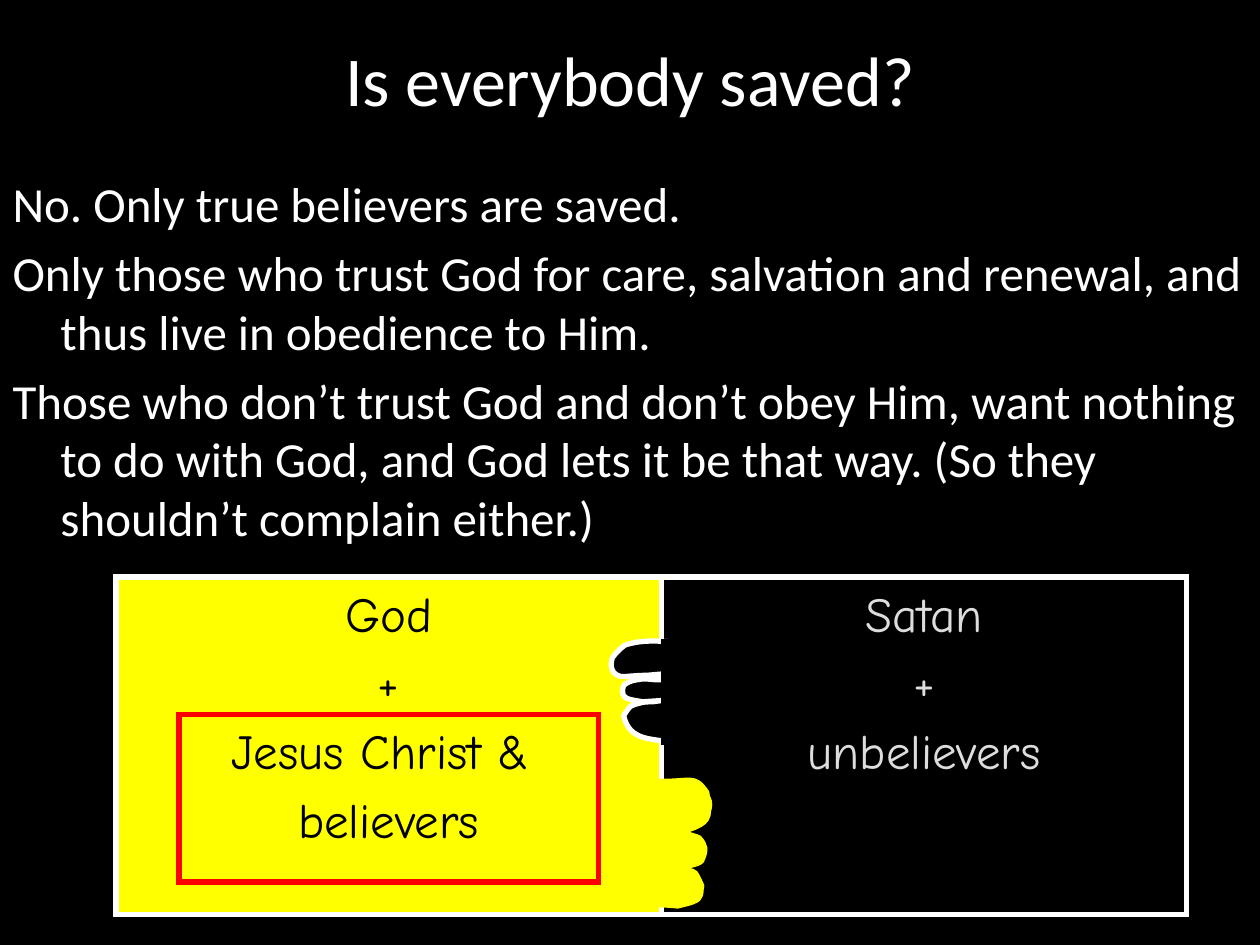
import pptx
import pptx.dml.color
import pptx.enum.shapes
import pptx.enum.text
import pptx.oxml.ns
import pptx.util
from lxml import etree
from pptx.util import Inches

WHITE, BLACK, YELLOW, RED, GREY = "FFFFFF", "000000", "FFFF00", "FF0000", "DDDDDD"
ALIGN = pptx.enum.text.PP_ALIGN
ANCHOR = pptx.enum.text.MSO_ANCHOR

BODY = [
    "No. Only true believers are saved.",
    "Only those who trust God for care, salvation and renewal, and thus live in obedience to Him.",
    "Those who don’t trust God and don’t obey Him, want nothing to do with God, "
    "and God lets it be that way. (So they shouldn’t complain either.)",
]
GOD_SIDE = ["God", "+", "Jesus Christ & ", "believers"]
SATAN_SIDE = ["Satan", "+", "unbelievers"]

DARK_FINGERS = [
    (.6, .1),
    (.46, .09), (.31, .07), (.16, .12), (.12, .15), (.09, .18), (.06, .22),
    (.04, .29), (.05, .35), (.13, .37), (.19, .37), (.25, .36), (.32, .36),
    (.38, .36), (.54, .33), (.5, .37), (.45, .42), (.36, .38), (.29, .39),
    (.23, .4), (.2, .4), (.15, .44), (.11, .56), (.21, .55), (.3, .57),
    (.75, .54), (.51, .55), (.38, .57), (.35, .57), (.31, .57), (.28, .58),
    (.27, .58), (.21, .6), (.2, .61), (.18, .63), (.15, .68), (.15, .68),
    (.19, .85), (.31, .86), (.46, .88), (.55, .86), (.58, .87), (.63, .8),
    (.64, .74), (.65, .68), (.67, .62), (.66, .51), (.66, .4), (.65, .3),
    (.65, .22), (.6, .18), (.6, .1),
]
BRIGHT_FINGERS = [
    (.15, .25),
    (.34, .2), (.25, .22), (.42, .2), (.68, .21), (.71, .14), (.81, .29),
    (.81, .31), (.82, .34), (.83, .36), (.84, .4), (.82, .43), (.82, .47),
    (.8, .56), (.66, .58), (.59, .61), (.46, .6), (.34, .61), (.21, .6),
    (.19, .59), (.26, .58), (.28, .58), (.36, .58), (.45, .59), (.54, .6),
    (.61, .61), (.68, .62), (.75, .65), (.8, .71), (.81, .74), (.77, .83),
    (.75, .86), (.66, .87), (.63, .88), (.52, .88), (.42, .87), (.32, .87),
    (.29, .87), (.37, .88), (.39, .88), (.47, .89), (.52, .9), (.6, .9),
    (.64, .91), (.69, .9), (.72, .93), (.74, .96), (.77, 1.03), (.77, 1.03),
    (.76, 1.06), (.77, 1.1), (.75, 1.12), (.74, 1.16), (.61, 1.18), (.58, 1.19),
    (.48, 1.18), (.39, 1.18), (.3, 1.17), (.26, 1.17), (.21, 1.16), (.16, 1.15),
    (.14, 1.14), (.1, 1.14), (.1, 1.14), (.07, 1), (.08, 1.08), (.1, .85),
    (.11, .72), (.12, .53), (.2, .41), (.19, .34), (.2, .3), (.15, .25),
]


def rgb(color):
    """Turn a hex string into a colour."""
    return pptx.dml.color.RGBColor.from_string(color)


def add_tag(parent, tag, **attributes):
    """Append a drawing element to its parent."""
    return etree.SubElement(parent, pptx.oxml.ns.qn(tag), **attributes)


def write_text(shape, lines, size=28, font="Calibri", color=WHITE, align=ALIGN.LEFT,
               anchor=ANCHOR.TOP, hanging=True):
    """Write one formatted paragraph for each line."""
    frame = shape.text_frame
    frame.word_wrap = True
    frame.auto_size = pptx.enum.text.MSO_AUTO_SIZE.NONE
    frame.vertical_anchor = anchor
    frame.text = "\n".join(lines)
    for paragraph in frame.paragraphs:
        paragraph.alignment = align
        if hanging:
            properties = paragraph._p.get_or_add_pPr()
            properties.set("marL", str(Inches(0.38)))
            properties.set("indent", str(Inches(-0.38)))
            add_tag(add_tag(properties, "a:spcBef"), "a:spcPct", val="20000")
            add_tag(properties, "a:buNone")
        for run in paragraph.runs:
            run.font.size = pptx.util.Pt(size)
            run.font.name = font
            run.font.color.rgb = rgb(color)


def place(shape, left, top, width, height):
    """Move a placeholder to a box in inches."""
    shape.left, shape.top = Inches(left), Inches(top)
    shape.width, shape.height = Inches(width), Inches(height)


def paint(shape, fill, line, weight=3):
    """Set fill and line, and drop the shadow."""
    shape.shadow.inherit = False
    if fill:
        shape.fill.solid()
        shape.fill.fore_color.rgb = rgb(fill)
    else:
        shape.fill.background()
    shape.line.color.rgb = rgb(line)
    shape.line.width = pptx.util.Pt(weight)


def add_box(slide, left, top, width, height, fill, line, weight=3):
    """Add a painted rectangle with sharp corners."""
    box = slide.shapes.add_shape(pptx.enum.shapes.MSO_SHAPE.RECTANGLE, Inches(left),
                                 Inches(top), Inches(width), Inches(height))
    paint(box, fill, line, weight)
    add_tag(box.line._get_or_add_ln(), "a:miter", lim="800000")
    return box


def add_fingers(slide, left, top, controls, fill, line):
    """Draw a closed outline of cubic curves from chained control points."""
    points = [(Inches(left + x), Inches(top + y)) for x, y in controls]
    builder = slide.shapes.build_freeform(*points[0], scale=1.0)
    builder.add_line_segments(points[3::3], close=True)
    fingers = builder.convert_to_shape()
    segments = list(fingers._element.iter(pptx.oxml.ns.qn("a:lnTo")))
    for index, segment in enumerate(segments):
        curve = etree.Element(pptx.oxml.ns.qn("a:cubicBezTo"))
        for x, y in points[3 * index + 1:3 * index + 4]:
            add_tag(curve, "a:pt", x=str(x - fingers.left), y=str(y - fingers.top))
        segment.getparent().replace(segment, curve)
    paint(fingers, fill, line)


def add_heading(slide, left, top, width, height):
    """Fill the title and body placeholders."""
    title, body = slide.shapes.title, slide.placeholders[1]
    place(title, left, top, width, 1.25)
    write_text(title, ["Is everybody saved?"], size=40, align=ALIGN.CENTER,
               anchor=ANCHOR.MIDDLE, hanging=False)
    place(body, left, top + 1.33, width, height - 1.33)
    write_text(body, BODY)


def add_two_sides(slide, left, top, width, height):
    """Draw the two opposed panels and the fingers reaching across."""
    god_width = 4.33
    border = left + god_width
    god = add_box(slide, left, top, god_width, height, YELLOW, WHITE)
    write_text(god, GOD_SIDE, font="Comic Neue", color=BLACK, align=ALIGN.CENTER)
    satan = add_box(slide, border, top, width - god_width, height, BLACK, WHITE)
    write_text(satan, SATAN_SIDE, font="Comic Neue", color=GREY, align=ALIGN.CENTER)
    add_box(slide, left + 0.5, top + 1.09, 3.33, 1.33, None, RED)
    add_fingers(slide, border - 0.45, top + 0.42, DARK_FINGERS, BLACK, WHITE)
    add_fingers(slide, border - 0.45, top + 1.42, BRIGHT_FINGERS, YELLOW, YELLOW)
    add_box(slide, border, top + 0.5, 0.42, 0.83, BLACK, BLACK, weight=0.75)


def main():
    """Build and save the slide."""
    deck = pptx.Presentation()
    deck.slide_width, deck.slide_height = Inches(10), Inches(7.5)
    slide = deck.slides.add_slide(deck.slide_layouts[1])
    slide.background.fill.solid()
    slide.background.fill.fore_color.rgb = rgb(BLACK)
    add_heading(slide, 0, 0, 10, 4.46)
    add_two_sides(slide, 0.92, 4.58, 8.5, 2.68)
    deck.save("out.pptx")


if __name__ == "__main__":
    main()
